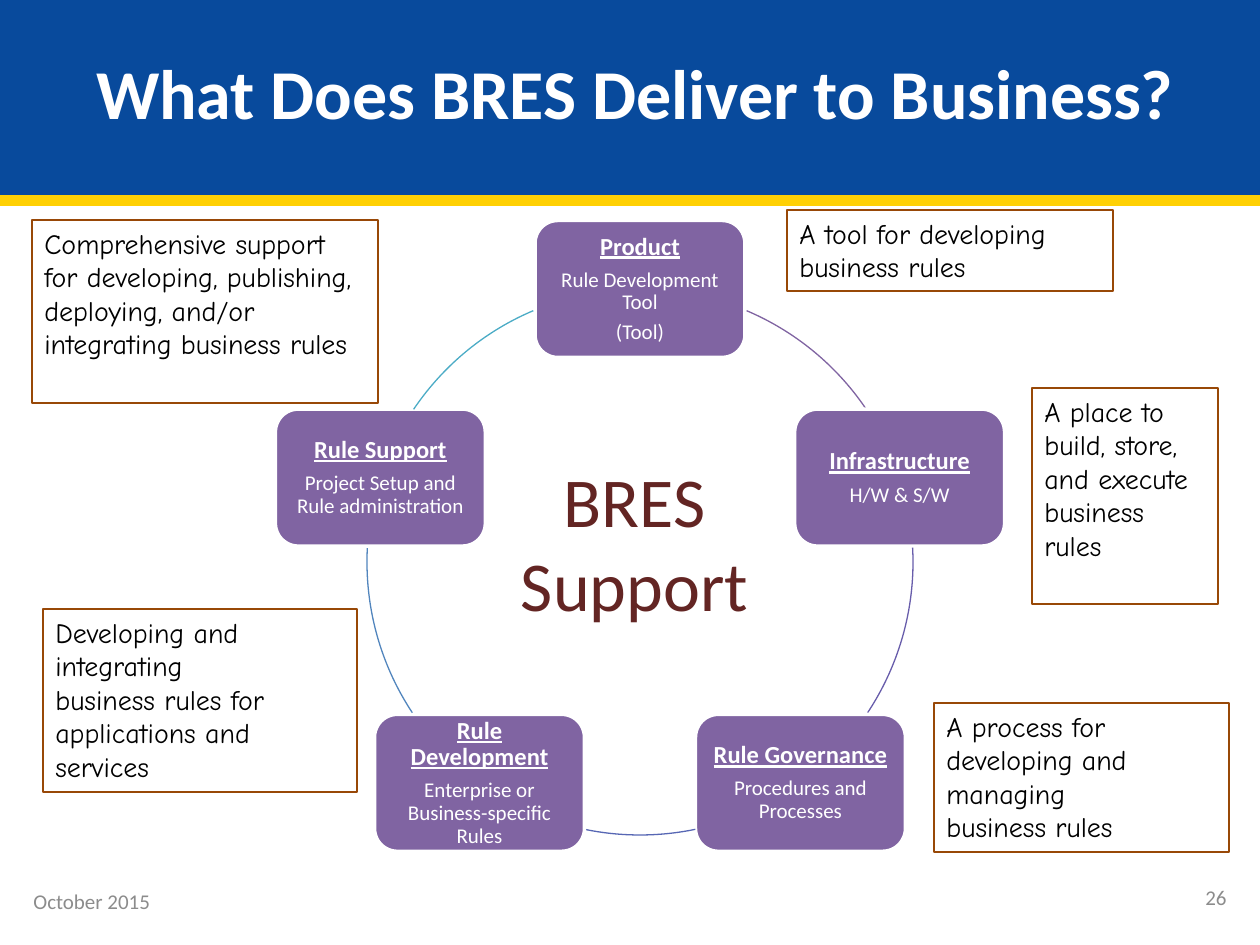
"""Build the slide on what BRES delivers to business: a five-step ring with notes."""
from math import cos, radians, sin

from pptx import Presentation
from pptx.dml.color import RGBColor
from pptx.enum.shapes import MSO_SHAPE
from pptx.enum.text import MSO_ANCHOR, PP_ALIGN
from pptx.util import Emu, Pt

RECTANGLE, ROUNDED, ARC = MSO_SHAPE.RECTANGLE, MSO_SHAPE.ROUNDED_RECTANGLE, MSO_SHAPE.ARC
LEFT, CENTER, RIGHT = PP_ALIGN.LEFT, PP_ALIGN.CENTER, PP_ALIGN.RIGHT
TOP, MIDDLE = MSO_ANCHOR.TOP, MSO_ANCHOR.MIDDLE

WHITE = RGBColor(0xFF, 0xFF, 0xFF)
BLACK = RGBColor(0, 0, 0)
BLUE = RGBColor(0x08, 0x4A, 0x9C)
YELLOW = RGBColor(0xFF, 0xD0, 0x04)
PURPLE = RGBColor(0x80, 0x64, 0xA2)
BROWN = RGBColor(0x98, 0x48, 0x07)
MAROON = RGBColor(0x63, 0x25, 0x23)
GRAY = RGBColor(0x8C, 0x8C, 0x8C)

BODY_FONT, NOTE_FONT = "Calibri", "Comic Neue"

TITLE = "What Does BRES Deliver to Business?"
NODES = [
    ("Product", "Rule Development Tool", "(Tool)"),
    ("Infrastructure", "H/W & S/W"),
    ("Rule Governance", "Procedures and Processes"),
    ("Rule Development", "Enterprise or Business-specific Rules"),
    ("Rule Support", "Project Setup and Rule administration"),
]
ARCS = [
    (293, 326, PURPLE),
    (357, 33.5, RGBColor(0x68, 0x5D, 0xAB)),
    (78.3, 101.7, RGBColor(0x57, 0x67, 0xB4)),
    (146.5, 183, RGBColor(0x51, 0x85, 0xBD)),
    (214, 247, RGBColor(0x4B, 0xAC, 0xC6)),
]
NOTES = [
    ((787, 210, 326, 81), ["A tool for developing", "business rules"]),
    ((1032, 388, 186, 216), ["A place to build, store, and execute", "business rules"]),
    ((934, 703, 295, 149), ["A process for developing and managing", "business rules"]),
    ((43, 609, 314, 183),
     ["Developing and integrating", "business rules for applications and services"]),
    ((32, 220, 346, 183),
     ["Comprehensive support for developing, publishing, deploying, "
      "and/or integrating business rules"]),
]
LABELS = [
    ((21, 876, 294, 50), ["October 2015"], 12, GRAY, LEFT, MIDDLE),
    ((1103, 872, 136, 50), ["26"], 12, GRAY, RIGHT, MIDDLE),
    ((507, 451, 255, 183), ["BRES", "Support"], 40, MAROON, CENTER, TOP),
]

RING_X, RING_Y, RING_RADIUS = 640, 562, 273
NODE_WIDTH, NODE_HEIGHT, NODE_INSET = 210, 137, 8


def px(value):
    return Emu(round(value * 914400 / 126))


def add_shape(slide, kind, box, fill=None, line=None, width=0.75):
    shape = slide.shapes.add_shape(kind, *map(px, box))
    shape.shadow.inherit = False
    if fill is None:
        shape.fill.background()
    else:
        shape.fill.solid()
        shape.fill.fore_color.rgb = fill
    if line is None:
        shape.line.fill.background()
    else:
        shape.line.color.rgb = line
        shape.line.width = Pt(width)
    return shape


def write(shape, lines, size, color, font=BODY_FONT, align=LEFT, anchor=TOP):
    frame = shape.text_frame
    frame.word_wrap = True
    frame.vertical_anchor = anchor
    frame.text = "\n".join(lines)
    for paragraph in frame.paragraphs:
        paragraph.alignment = align
        paragraph.font.name = font
        paragraph.font.size = Pt(size)
        paragraph.font.color.rgb = color
    return frame


def add_header(slide):
    add_shape(slide, RECTANGLE, (0, 195, 1260, 11), YELLOW)
    add_shape(slide, RECTANGLE, (0, 0, 1260, 195), BLUE)
    title = slide.shapes.title
    title.left, title.top, title.width, title.height = map(px, (68, 13, 1134, 158))
    frame = write(title, [TITLE], 40, WHITE, align=CENTER, anchor=MIDDLE)
    frame.paragraphs[0].font.bold = True
    title._element.getparent().append(title._element)


def add_node(slide, index, lines):
    angle = radians(index * 360 / len(NODES) - 90)
    left = RING_X + RING_RADIUS * cos(angle) - NODE_WIDTH / 2
    top = RING_Y + RING_RADIUS * sin(angle) - NODE_HEIGHT / 2
    node = add_shape(slide, ROUNDED, (left, top, NODE_WIDTH, NODE_HEIGHT), PURPLE, WHITE, 2)
    frame = write(node, lines, 12, WHITE, align=CENTER, anchor=MIDDLE)
    frame.margin_left = frame.margin_right = px(NODE_INSET)
    frame.margin_top = frame.margin_bottom = px(NODE_INSET)
    for paragraph in frame.paragraphs:
        paragraph.line_spacing = 0.9
        paragraph.space_after = Pt(4)
    heading = frame.paragraphs[0]
    heading.space_after = Pt(5)
    heading.font.size = Pt(14)
    heading.font.bold = heading.font.underline = True


def add_arc(slide, start, end, color):
    box = (RING_X - RING_RADIUS, RING_Y - RING_RADIUS, 2 * RING_RADIUS, 2 * RING_RADIUS)
    arc = add_shape(slide, ARC, box, line=color)
    for position, degrees in enumerate((start, end)):
        arc.adjustments[position] = degrees * 0.6


def main():
    presentation = Presentation()
    presentation.slide_width, presentation.slide_height = px(1260), px(945)
    slide = presentation.slides.add_slide(presentation.slide_layouts[5])
    add_header(slide)
    for index, (lines, arc) in enumerate(zip(NODES, ARCS)):
        add_node(slide, index, lines)
        add_arc(slide, *arc)
    for box, lines in NOTES:
        note = add_shape(slide, RECTANGLE, box, line=BROWN)
        write(note, lines, 16, BLACK, NOTE_FONT)
    for box, lines, size, color, align, anchor in LABELS:
        label = slide.shapes.add_textbox(*map(px, box))
        write(label, lines, size, color, align=align, anchor=anchor)
    presentation.save("out.pptx")


if __name__ == "__main__":
    main()
